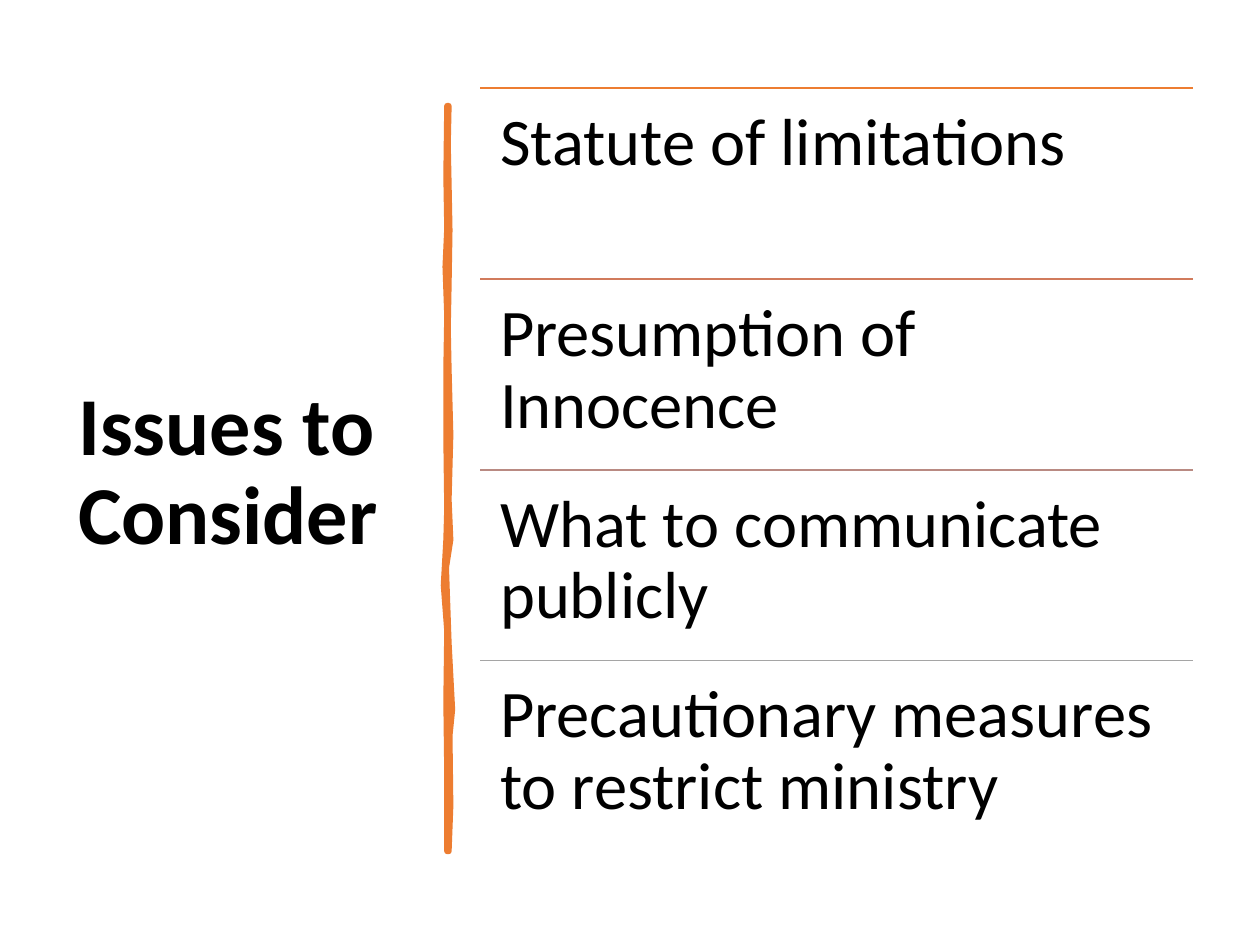
from lxml.etree import SubElement
from pptx import Presentation
from pptx.dml.color import RGBColor
from pptx.enum.shapes import MSO_CONNECTOR, MSO_SHAPE
from pptx.enum.text import MSO_ANCHOR, MSO_AUTO_SIZE, PP_ALIGN
from pptx.oxml.ns import qn
from pptx.util import Pt

COLORS = {"page": "FFFFFF", "text": "000000", "stroke": "ED7D31"}
ISSUES = [
    ("Statute of limitations", "ED7D31"),
    ("Presumption of Innocence", "D17B5C"),
    ("What to communicate publicly", "B98A82"),
    ("Precautionary measures to restrict ministry", "A5A5A5"),
]
# Outline of the brush stroke, from its top left corner: down the right, up the left
STROKE_RIGHT = [(3, 0), (2.5, 22), (3, 45), (3.5, 71), (3, 102), (2.5, 127), (3, 151),
                (4, 188), (3, 225), (4, 248), (1.5, 264), (3, 307), (5, 345),
                (3.5, 360), (4, 400), (3, 426)]
STROKE_LEFT = [(2, 426), (2, 381), (1.5, 340), (2, 300), (0, 274), (1.5, 248),
               (2, 230), (1.5, 190), (1.5, 150), (2, 120), (1, 92), (2, 70), (1.5, 40), (2, 0)]


def rgb(value):
    return RGBColor.from_string(value)


def set_all(target, **values):
    for name, value in values.items():
        setattr(target, name, value)


def write(box, text, size, bold, anchor, inset_x, inset_y):
    frame = box.text_frame
    set_all(frame, text=text, word_wrap=True, auto_size=MSO_AUTO_SIZE.NONE,
            vertical_anchor=anchor, margin_left=Pt(inset_x), margin_right=Pt(inset_x),
            margin_top=Pt(inset_y), margin_bottom=Pt(inset_y))
    para = frame.paragraphs[0]
    set_all(para, alignment=PP_ALIGN.LEFT, line_spacing=0.9)
    span = para.runs[0]
    set_all(span.font, name="Calibri", size=Pt(size), bold=bold)
    span.font.color.rgb = rgb(COLORS["text"])


def add_background(page, width, height):
    backdrop = page.shapes.add_shape(MSO_SHAPE.RECTANGLE, 0, 0, width, height)
    backdrop.shadow.inherit = False
    backdrop.fill.solid()
    backdrop.fill.fore_color.rgb = rgb(COLORS["page"])
    backdrop.line.fill.background()
    # Keep the backdrop behind the title placeholder
    page.shapes._spTree.insert(2, backdrop._element)


def add_title(page, left, top, width, height):
    title = page.shapes.title
    set_all(title, left=Pt(left), top=Pt(top), width=Pt(width), height=Pt(height))
    write(title, "Issues to Consider", 47, True, MSO_ANCHOR.MIDDLE, 7.2, 3.6)


def add_brush_stroke(page, left, top):
    points = [(Pt(left + x), Pt(top + y)) for x, y in STROKE_RIGHT + STROKE_LEFT]
    builder = page.shapes.build_freeform(*points[0])
    builder.add_line_segments(points[1:], close=True)
    stroke = builder.convert_to_shape()
    stroke.shadow.inherit = False
    stroke.fill.solid()
    stroke.fill.fore_color.rgb = rgb(COLORS["stroke"])
    stroke.line.color.rgb = rgb(COLORS["stroke"])
    stroke.line.width = Pt(3.25)


def add_issue_list(page, left, top, width, height):
    group = page.shapes.add_group_shape()
    row_height = height / len(ISSUES)
    for row, (text, color) in enumerate(ISSUES):
        y = top + row * row_height
        rule = group.shapes.add_connector(
            MSO_CONNECTOR.STRAIGHT, Pt(left), Pt(y), Pt(left + width), Pt(y))
        rule.line.color.rgb = rgb(color)
        rule.line.width = Pt(1)
        SubElement(rule._element.spPr, qn("a:effectLst"))
        box = group.shapes.add_textbox(Pt(left), Pt(y), Pt(width), Pt(row_height))
        write(box, text, 38, False, MSO_ANCHOR.TOP, 11.4, 11.4)


def main():
    deck = Presentation()
    set_all(deck, slide_width=Pt(720), slide_height=Pt(540))
    page = deck.slides.add_slide(deck.slide_layouts[5])
    add_background(page, deck.slide_width, deck.slide_height)
    add_title(page, 37.5, 50.4, 201.6, 440)
    add_brush_stroke(page, 253.5, 60.5)
    add_issue_list(page, 274.4, 50.4, 407.4, 436)
    deck.save("out.pptx")


if __name__ == "__main__":
    main()
